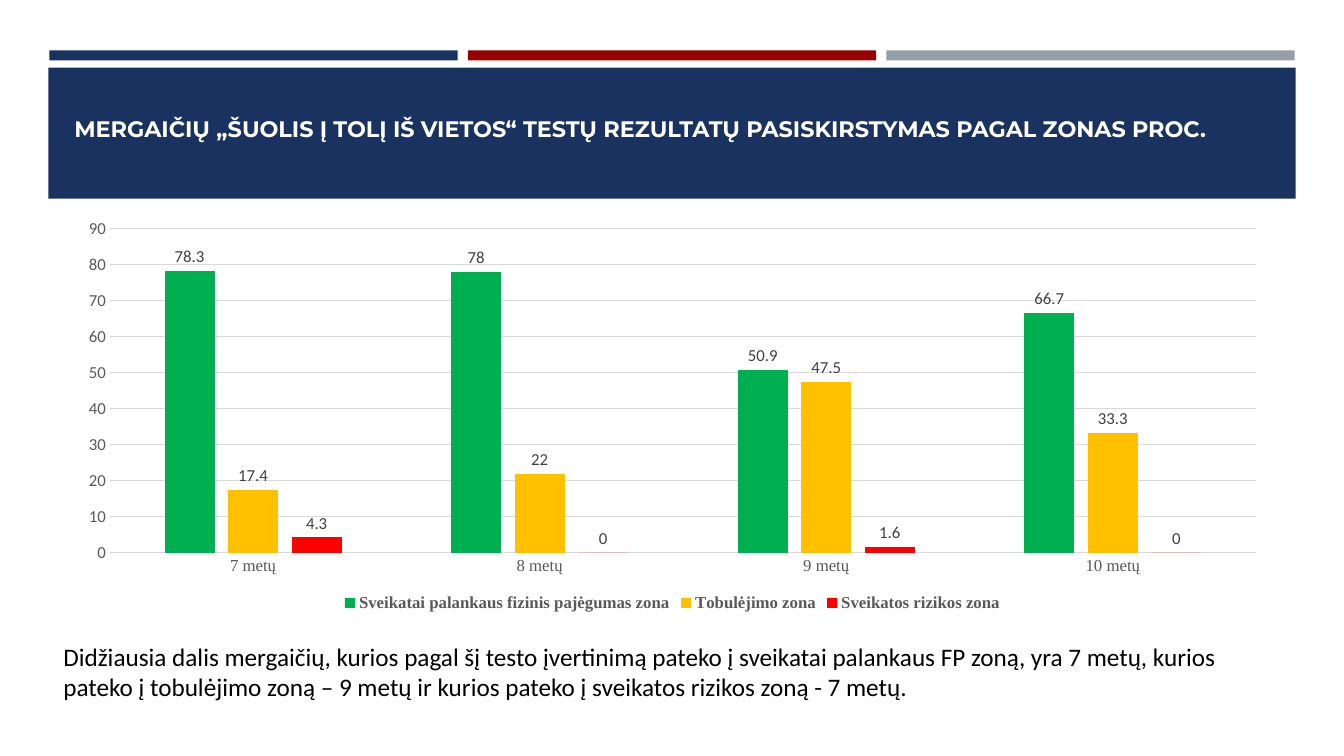
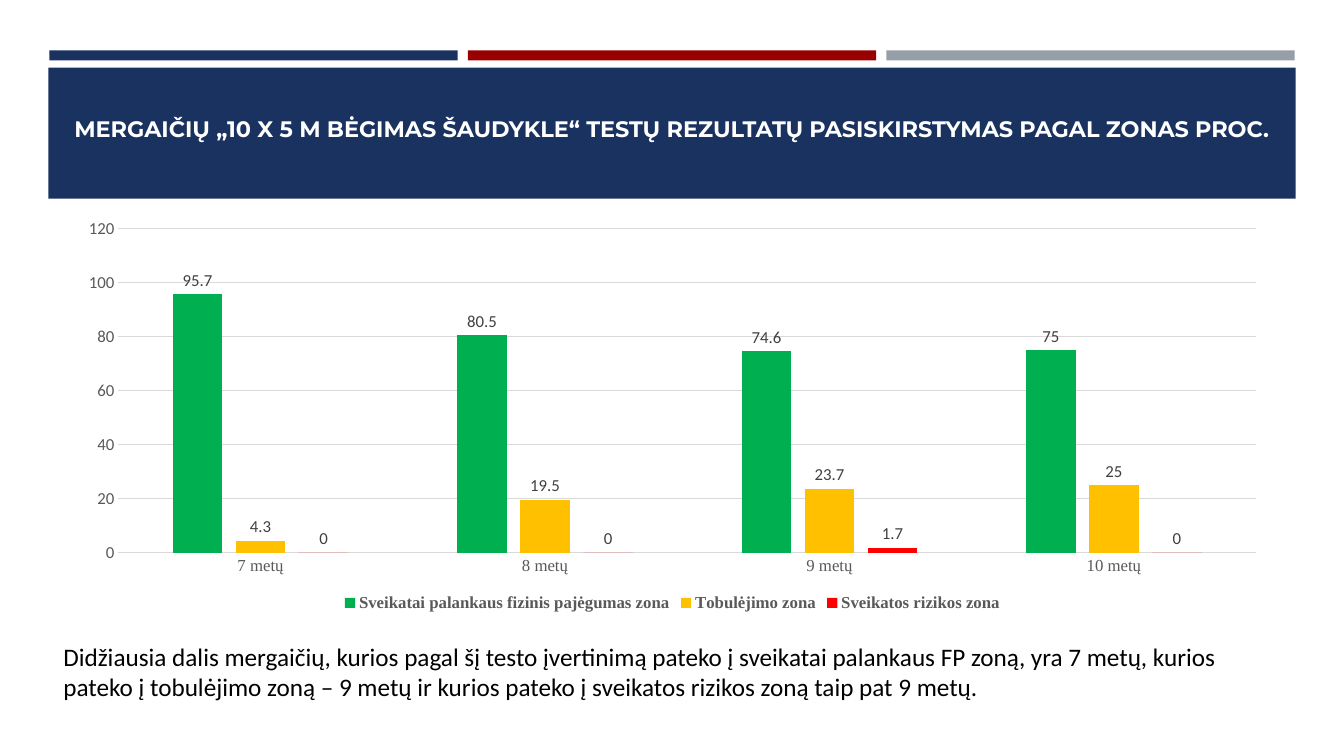
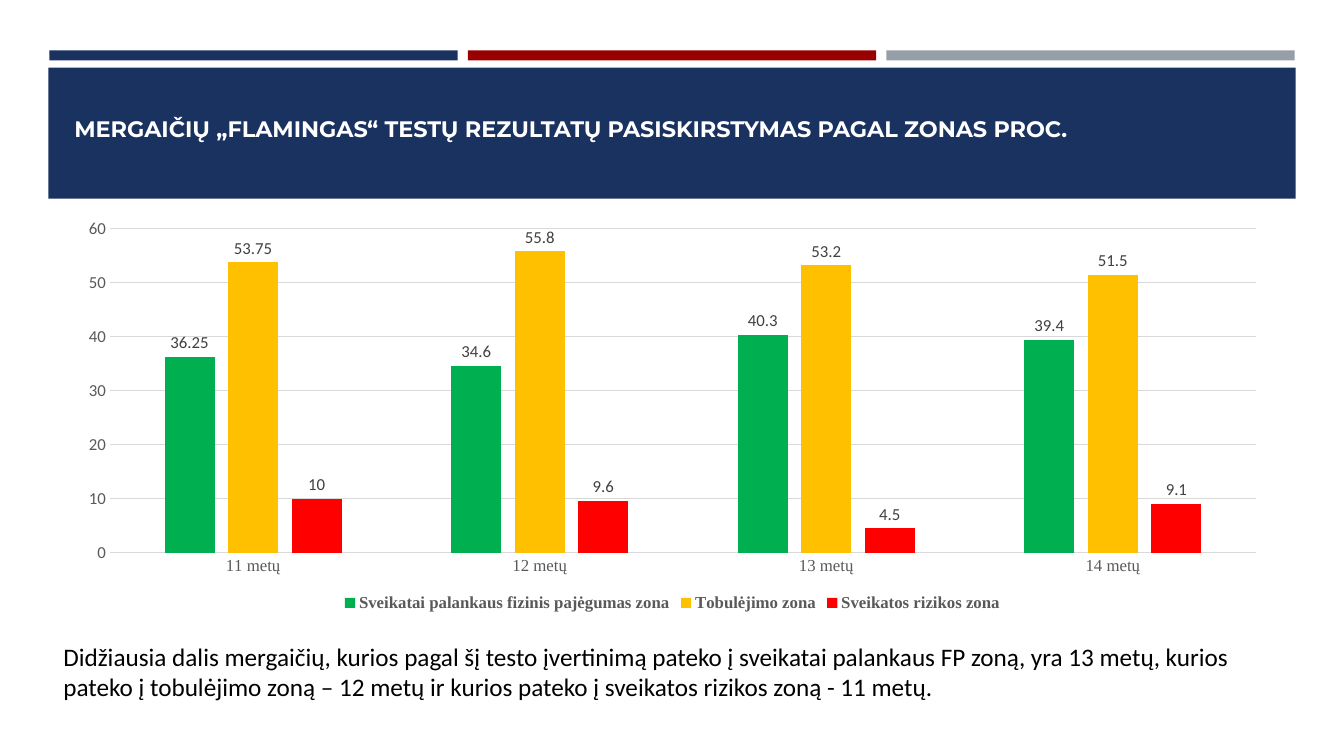
from pptx import Presentation
from pptx.chart.data import CategoryChartData
from pptx.dml.color import RGBColor
from pptx.enum.chart import XL_CHART_TYPE, XL_LABEL_POSITION, XL_LEGEND_POSITION, XL_TICK_MARK
from pptx.enum.shapes import MSO_SHAPE
from pptx.enum.text import MSO_ANCHOR
from pptx.util import Inches, Pt

RECT = MSO_SHAPE.RECTANGLE
COLUMN = XL_CHART_TYPE.COLUMN_CLUSTERED
OUTER = XL_LABEL_POSITION.OUTSIDE_END
BELOW = XL_LEGEND_POSITION.BOTTOM
NO_TICK = XL_TICK_MARK.NONE
MIDDLE, BOTTOM = MSO_ANCHOR.MIDDLE, MSO_ANCHOR.BOTTOM

HUES = {
    "navy": "1A3260", "red": "990000", "gray": "969FA7", "white": "FFFFFF",
    "black": "000000", "good": "00B050", "fair": "FFC000", "risk": "FF0000",
    "axis": "595959", "label": "404040", "grid": "D9D9D9",
}

# Text styles: font attributes plus a colour name
STYLES = {
    "title": {"name": "Montserrat", "size": Pt(16), "bold": True, "hue": "white"},
    "note": {"name": "Calibri", "size": Pt(18), "hue": "black"},
    "chart": {"name": "Calibri", "size": Pt(10), "hue": "black"},
    "value": {"name": "Calibri", "size": Pt(12), "bold": False, "hue": "axis"},
    "group": {"name": "Times New Roman", "size": Pt(12), "bold": False, "hue": "axis"},
    "legend": {"name": "Times New Roman", "size": Pt(12), "bold": True, "hue": "axis"},
    "label": {"name": "Calibri", "size": Pt(12), "bold": False, "hue": "label"},
}

# Regions: left, top, width, height
STRIPS = (0.49, 0.5, 12.35, 0.1)
BAND = (0.48, 0.67, 12.37, 1.3)
TITLE = (0.64, 0.61, 12.06, 1.11)
CHART = (0.64, 2.09, 12.06, 4.02)
NOTE = (0.53, 5.93, 12.06, 1.47)

ZONES = [
    ("Sveikatai palankaus fizinis pajėgumas zona", "good"),
    ("Tobulėjimo zona", "fair"),
    ("Sveikatos rizikos zona", "risk"),
]
LEAD = "Didžiausia dalis mergaičių, kurios pagal šį testo įvertinimą pateko į sveikatai palankaus FP zoną, yra "

SLIDES = [
    {
        "test": "ŠUOLIS Į TOLĮ IŠ VIETOS", "ages": range(7, 11), "top": 90, "step": 10,
        "rows": [(78.3, 78, 50.9, 66.7), (17.4, 22, 47.5, 33.3), (4.3, 0, 1.6, 0)],
        "note": "7 metų, kurios pateko į tobulėjimo zoną – 9 metų ir kurios pateko į sveikatos rizikos zoną - 7 metų.",
    },
    {
        "test": "10 X 5 M BĖGIMAS ŠAUDYKLE", "ages": range(7, 11), "top": 120, "step": 20,
        "rows": [(95.7, 80.5, 74.6, 75), (4.3, 19.5, 23.7, 25), (0, 0, 1.7, 0)],
        "note": "7 metų, kurios pateko į tobulėjimo zoną – 9 metų ir kurios pateko į sveikatos rizikos zoną taip pat 9 metų.",
    },
    {
        "test": "FLAMINGAS", "ages": range(11, 15), "top": 60, "step": 10,
        "rows": [(36.25, 34.6, 40.3, 39.4), (53.75, 55.8, 53.2, 51.5), (10, 9.6, 4.5, 9.1)],
        "note": "13 metų, kurios pateko į tobulėjimo zoną – 12 metų ir kurios pateko į sveikatos rizikos zoną - 11 metų.",
    },
]


def color(hue):
    return RGBColor.from_string(HUES[hue])


def place(box):
    return [Inches(x) for x in box]


def assign(item, values):
    for key, value in values.items():
        setattr(item, key, value)


def style(font, kind):
    values = dict(STYLES[kind])
    font.color.rgb = color(values.pop("hue"))
    assign(font, values)


def add_bar(slide, box, hue):
    bar = slide.shapes.add_shape(RECT, *place(box))
    bar.shadow.inherit = False
    bar.fill.solid()
    bar.fill.fore_color.rgb = color(hue)
    bar.line.fill.background()


def add_text(slide, box, text, kind, frame, para):
    area = slide.shapes.add_textbox(*place(box)).text_frame
    assign(area, {"word_wrap": True, **frame})
    line = area.paragraphs[0]
    assign(line, para)
    run = line.add_run()
    run.text = text
    style(run.font, kind)


def add_strips(slide, box, gap=0.1):
    left, top, width, height = box
    hues = ("navy", "red", "gray")
    part = (width - gap * (len(hues) - 1)) / len(hues)
    for i, hue in enumerate(hues):
        add_bar(slide, (left + i * (part + gap), top, part, height), hue)


def add_head(slide, test):
    add_strips(slide, STRIPS)
    add_bar(slide, BAND, "navy")
    title = f"MERGAIČIŲ „{test}“ TESTŲ REZULTATŲ PASISKIRSTYMAS PAGAL ZONAS PROC."
    frame = {"vertical_anchor": BOTTOM, "margin_bottom": Inches(0.31)}
    add_text(slide, TITLE, title, "title", frame, {})


def add_columns(slide, box, info):
    data = CategoryChartData()
    data.categories = [f"{age} metų" for age in info["ages"]]
    for (name, _), row in zip(ZONES, info["rows"]):
        data.add_series(name, row)
    chart = slide.shapes.add_chart(COLUMN, *place(box), data).chart
    assign(chart, {"has_title": False, "has_legend": True})
    style(chart.font, "chart")

    # Legend
    assign(chart.legend, {"position": BELOW, "include_in_layout": False})
    style(chart.legend.font, "legend")

    # Axes
    ticks = {"major_tick_mark": NO_TICK, "minor_tick_mark": NO_TICK}
    group, value = chart.category_axis, chart.value_axis
    for axis, kind in ((group, "group"), (value, "value")):
        assign(axis, ticks)
        style(axis.tick_labels.font, kind)
    assign(value, {"minimum_scale": 0, "maximum_scale": info["top"],
                   "major_unit": info["step"], "has_major_gridlines": True})
    value.format.line.fill.background()
    for line in (group.format.line, value.major_gridlines.format.line):
        line.color.rgb = color("grid")
        line.width = Pt(0.75)

    # Columns and their values
    plot = chart.plots[0]
    assign(plot, {"gap_width": 219, "overlap": -27, "vary_by_categories": False})
    for series, (_, hue) in zip(plot.series, ZONES):
        series.format.fill.solid()
        series.format.fill.fore_color.rgb = color(hue)
        labels = series.data_labels
        assign(labels, {"show_value": True, "position": OUTER})
        style(labels.font, "label")


def add_page(deck, info):
    slide = deck.slides.add_slide(deck.slide_layouts[6])
    add_head(slide, info["test"])
    add_columns(slide, CHART, info)
    add_text(slide, NOTE, LEAD + info["note"], "note", {"vertical_anchor": MIDDLE},
             {"space_before": Pt(3.6), "space_after": Pt(6)})


def main():
    deck = Presentation()
    assign(deck, {"slide_width": Inches(13.33), "slide_height": Inches(7.5)})
    for info in SLIDES:
        add_page(deck, info)
    deck.save("out.pptx")


if __name__ == "__main__":
    main()
